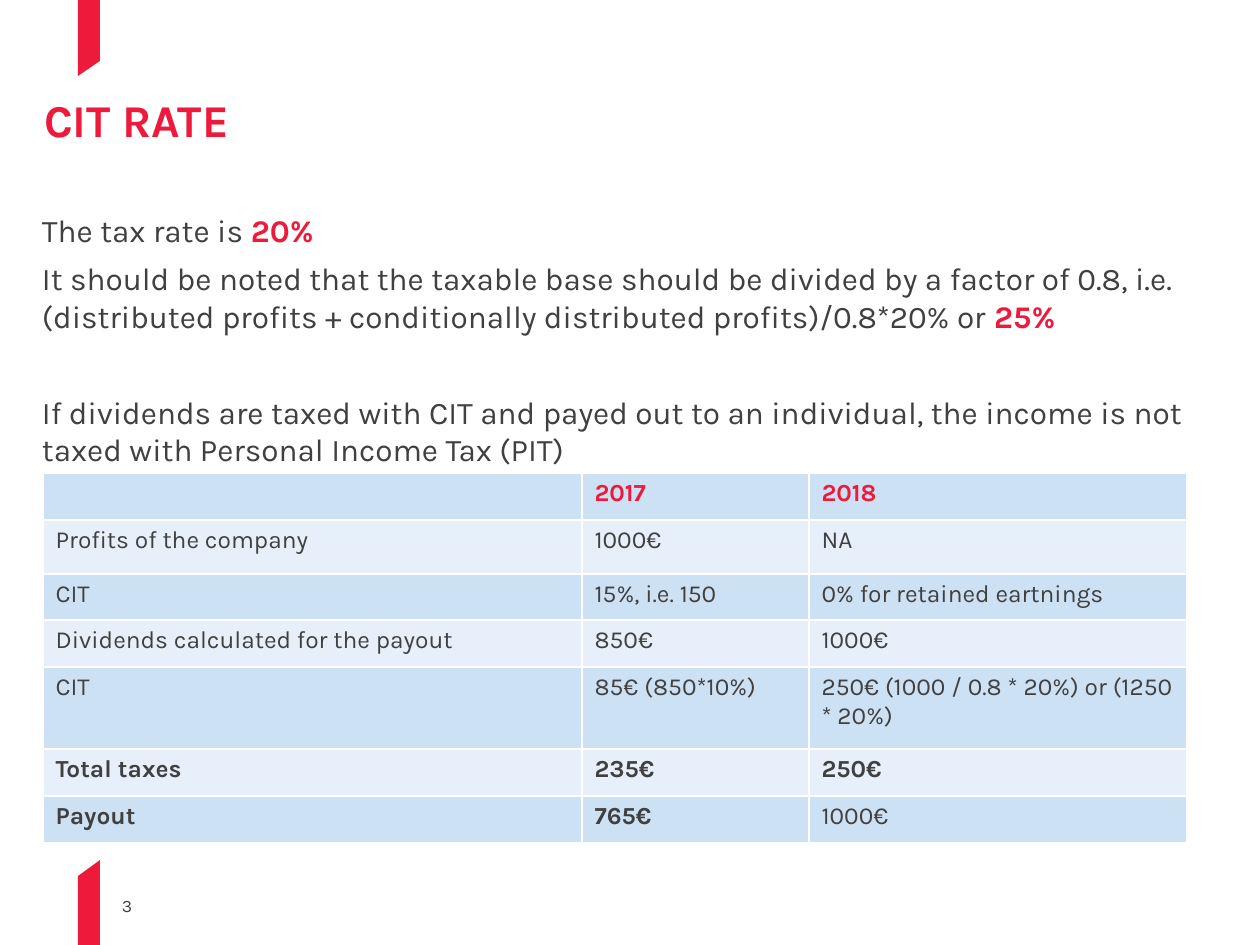
from lxml import etree
from pptx import Presentation
from pptx.dml.color import RGBColor
from pptx.enum.text import MSO_ANCHOR, MSO_AUTO_SIZE, PP_ALIGN
from pptx.oxml.ns import qn
from pptx.util import Emu, Pt

TOP, BOTTOM = MSO_ANCHOR.TOP, MSO_ANCHOR.BOTTOM
LEFT = PP_ALIGN.LEFT
GROW = MSO_AUTO_SIZE.SHAPE_TO_FIT_TEXT

RED = RGBColor(0xED, 0x1A, 0x3B)
GREY = RGBColor(0x40, 0x40, 0x40)
BLUE = RGBColor(0xCC, 0xE1, 0xF4)
PALE = RGBColor(0xE7, 0xF0, 0xFA)
SCALE = 914400 / 126
FONT = "Karla"
PLAIN = {"bold": False, "color": GREY}
STRONG = {"bold": True, "color": GREY}
ACCENT = {"bold": True, "color": RED}

RIBBONS = [
    [(78, 876), (78, 945), (100, 945), (100, 860)],
    [(100, 61), (100, 0), (78, 0), (78, 76)],
]
STATEMENTS = [
    (6, [("The tax rate is ", PLAIN), ("20%", ACCENT)]),
    (33, [("It should be noted that the taxable base should be divided by a factor of 0.8, "
           "i.e. (distributed profits + conditionally distributed profits)/0.8*20% or ", PLAIN),
          ("25%", ACCENT)]),
    (6, [("If dividends are taxed with CIT and payed out to an individual, "
          "the income is not taxed with Personal Income Tax (PIT)", PLAIN)]),
]
COLUMN_WIDTHS = [539, 227, 378]
TAX_ROWS = [
    (47, ["", "2017", "2018"], [ACCENT] * 3),
    (54, ["Profits of the company", "1000€", "NA"], [PLAIN] * 3),
    (46, ["CIT", "15%, i.e. 150", "0% for retained eartnings"], [PLAIN] * 3),
    (47, ["Dividends calculated for the payout", "850€", "1000€"], [PLAIN] * 3),
    (82, ["CIT", "85€ (850*10%)", "250€ (1000 / 0.8 * 20%) or (1250 * 20%)"], [PLAIN] * 3),
    (47, ["Total taxes", "235€", "250€"], [STRONG] * 3),
    (47, ["Payout", "765€", "1000€"], [STRONG, STRONG, PLAIN]),
]


def px(length):
    return Emu(round(length * SCALE))


def apply(target, values):
    for name, value in values.items():
        setattr(target, name, value)


def add_run(paragraph, text, size, style):
    run = paragraph.add_run()
    run.text = text
    apply(run.font, {"name": FONT, "size": Pt(size), "bold": style["bold"]})
    run.font.color.rgb = style["color"]


def format_frame(frame, anchor):
    apply(frame, {"margin_left": 0, "margin_top": 0, "margin_right": 0, "margin_bottom": 0,
                  "word_wrap": True, "auto_size": GROW, "vertical_anchor": anchor})


def add_ribbon(slide, points):
    corners = [(px(x), px(y)) for x, y in points]
    builder = slide.shapes.build_freeform(*corners[0], scale=1.0)
    builder.add_line_segments(corners[1:], close=True)
    ribbon = builder.convert_to_shape()
    ribbon.shadow.inherit = False
    ribbon.fill.solid()
    ribbon.fill.fore_color.rgb = RED
    ribbon.line.fill.background()


def add_title(slide, text):
    title = slide.shapes.title
    apply(title, {"left": px(44), "top": px(103), "width": px(1167), "height": px(44)})
    format_frame(title.text_frame, TOP)
    heading = title.text_frame.paragraphs[0]
    apply(heading, {"alignment": LEFT, "line_spacing": 0.8})
    add_run(heading, text, 26, ACCENT)


def add_text(slide, box, size, anchor, paragraphs):
    frame = slide.shapes.add_textbox(*map(px, box)).text_frame
    format_frame(frame, anchor)
    for index, (space_after, runs) in enumerate(paragraphs):
        paragraph = frame.add_paragraph() if index else frame.paragraphs[0]
        paragraph.space_after = Pt(space_after)
        for text, style in runs:
            add_run(paragraph, text, size, style)


def add_borders(cell):
    properties = cell._tc.get_or_add_tcPr()
    for side in ("a:lnL", "a:lnR", "a:lnT", "a:lnB"):
        border = etree.SubElement(properties, qn(side), w=str(Pt(1)))
        fill = etree.SubElement(border, qn("a:solidFill"))
        etree.SubElement(fill, qn("a:srgbClr"), val="FFFFFF")


def fill_cell(cell, text, style, background):
    add_borders(cell)
    cell.fill.solid()
    cell.fill.fore_color.rgb = background
    paragraph = cell.text_frame.paragraphs[0]
    if text:
        add_run(paragraph, text, 14, style)
    else:
        etree.SubElement(paragraph._p, qn("a:endParaRPr"), sz="1400")


def add_tax_table(slide):
    height = sum(row[0] for row in TAX_ROWS)
    table = slide.shapes.add_table(len(TAX_ROWS), len(COLUMN_WIDTHS), px(43), px(473),
                                   px(sum(COLUMN_WIDTHS)), px(height)).table
    for column, width in zip(table.columns, COLUMN_WIDTHS):
        column.width = px(width)
    for index, (row, (row_height, texts, styles)) in enumerate(zip(table.rows, TAX_ROWS)):
        row.height = px(row_height)
        for cell, text, style in zip(row.cells, texts, styles):
            fill_cell(cell, text, style, PALE if index % 2 else BLUE)


def main():
    presentation = Presentation()
    apply(presentation, {"slide_width": px(1260), "slide_height": px(945)})
    slide = presentation.slides.add_slide(presentation.slide_layouts[5])
    for points in RIBBONS:
        add_ribbon(slide, points)
    add_text(slide, (122, 895, 57, 21), 10, BOTTOM, [(0, [("3", PLAIN)])])
    add_title(slide, "CIT RATE")
    add_text(slide, (42, 211, 1173, 261), 18, TOP, STATEMENTS)
    add_tax_table(slide)
    presentation.save("out.pptx")


if __name__ == "__main__":
    main()
